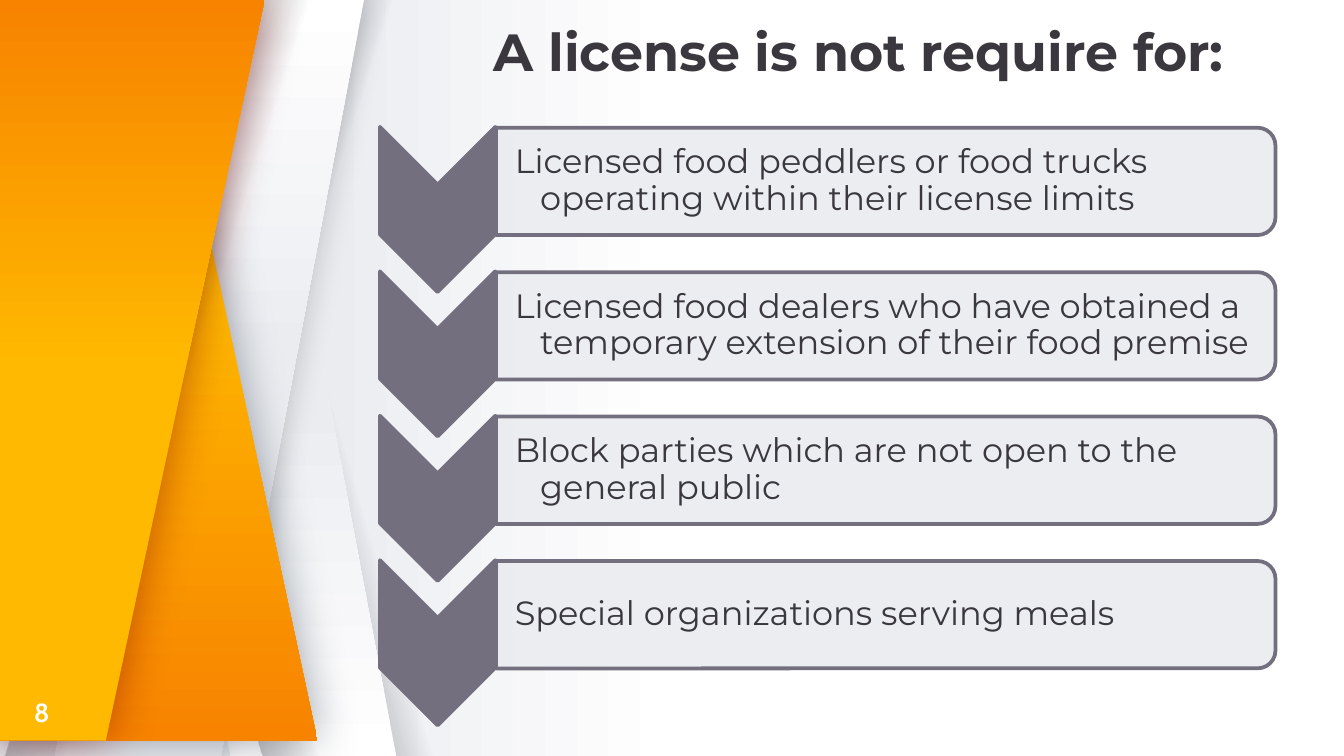
from lxml import etree
from pptx import Presentation
from pptx.dml.color import RGBColor
from pptx.enum.shapes import MSO_SHAPE
from pptx.enum.text import MSO_ANCHOR, PP_ALIGN
from pptx.oxml.ns import qn
from pptx.util import Cm, Pt

PARALLELOGRAM = MSO_SHAPE.PARALLELOGRAM
CHEVRON = MSO_SHAPE.CHEVRON
ROUNDED_END = MSO_SHAPE.ROUND_2_SAME_RECTANGLE
MIDDLE, BOTTOM = MSO_ANCHOR.MIDDLE, MSO_ANCHOR.BOTTOM
LEFT, CENTER = PP_ALIGN.LEFT, PP_ALIGN.CENTER

WHITE = RGBColor(0xFF, 0xFF, 0xFF)
PALE = RGBColor(0xEA, 0xEC, 0xF0)
SLATE = RGBColor(0x3E, 0x46, 0x55)
INK = RGBColor(0x27, 0x25, 0x2C)
TEXT = RGBColor(0x3A, 0x37, 0x3F)
MAUVE = RGBColor(0x74, 0x6F, 0x7E)
YELLOW = RGBColor(0xFF, 0xB9, 0x00)
ORANGE = RGBColor(0xF7, 0x83, 0x00)
BLACK = RGBColor(0x00, 0x00, 0x00)
MAROON = RGBColor(0x7E, 0x08, 0x08)

TITLE = "A license is not require for:"
PAGE = "8"
EXEMPTIONS = [
    "Licensed food peddlers or food trucks operating within their license limits",
    "Licensed food dealers who have obtained a temporary extension of their food premise",
    "Block parties which are not open to the general public",
    "Special organizations serving meals",
]

WIDTH, HEIGHT = 25.4, 14.29
BAND_WIDTH = 5.84
BACKDROP = [(0, WHITE, 100), (50, WHITE, 100), (76, PALE, 100), (100, PALE, 100)]
SHADE = [(0, SLATE, 100), (13, SLATE, 100), (55, INK, 0), (100, INK, 0)]
SILVER = [(0, WHITE, 100), (47, PALE, 100), (100, PALE, 100)]
LOWER_AMBER = [(0, YELLOW, 100), (37, YELLOW, 100), (100, ORANGE, 100)]
UPPER_AMBER = [(0, YELLOW, 100), (50, YELLOW, 100), (100, ORANGE, 100)]

BANDS = [
    dict(left=2.72, slant=0.753, flip=True, stops=SHADE, angle=196),
    dict(left=1.65, slant=0.463, flip=True, stops=SILVER, angle=270),
    dict(left=1.65, slant=0.753, flip=False, stops=SHADE, angle=18),
    dict(left=1.04, slant=0.463, flip=False, stops=SILVER, angle=90,
         shadow=(BLACK, 20, 16.9)),
    dict(left=0.56, slant=0.753, flip=True, stops=SHADE, angle=196),
    dict(points=[(0, 0), (0, HEIGHT), (5.66, HEIGHT), (2.92, 0)],
         stops=LOWER_AMBER, angle=90, shadow=(SLATE, 50, 24.8)),
    dict(left=0.08, slant=0.753, flip=False, stops=SHADE, angle=18),
    dict(points=[(0, HEIGHT), (0, 0), (5.08, 0), (2.34, HEIGHT)],
         stops=UPPER_AMBER, angle=270, shadow=(MAROON, 50, 24.8)),
]

TITLE_FONT = dict(name="Montserrat", size=Pt(28), bold=True)
PAGE_FONT = dict(name="Cabin", size=Pt(14), bold=True)
ITEM_FONT = dict(name="Montserrat", size=Pt(18), bold=False)

ROW_PITCH = 2.73
CHEVRON_CENTER, CHEVRON_SIZE = (8.27, 3.96), (3.12, 2.18)
BAR_CENTER, BAR_SIZE = (16.74, 3.43), (2.03, 14.73)
ITEM_BOX = (9.37, 2.51, 14.63, 1.83)
HANGING = Cm(0.48)


def add_color(parent, color, alpha):
    node = etree.SubElement(parent, qn("a:srgbClr"), val=str(color))
    if alpha < 100:
        etree.SubElement(node, qn("a:alpha"), val=str(alpha * 1000))


def set_gradient(properties, stops, angle):
    gradient = etree.Element(qn("a:gradFill"), rotWithShape="1")
    stop_list = etree.SubElement(gradient, qn("a:gsLst"))
    for position, color, alpha in stops:
        stop = etree.SubElement(stop_list, qn("a:gs"), pos=str(position * 1000))
        add_color(stop, color, alpha)
    etree.SubElement(gradient, qn("a:lin"), ang=str(angle * 60000), scaled="0")
    properties.replace(properties.find(qn("a:solidFill")), gradient)


def add_band(slide, band):
    if "points" in band:
        builder = slide.shapes.build_freeform(scale=Cm(1))
        start, *rest = band["points"]
        builder = slide.shapes.build_freeform(*start, scale=Cm(1))
        builder.add_line_segments(rest, close=True)
        shape = builder.convert_to_shape()
    else:
        shape = slide.shapes.add_shape(
            PARALLELOGRAM, Cm(band["left"]), 0, Cm(BAND_WIDTH), Cm(HEIGHT))
        shape.adjustments[0] = band["slant"]
        if band["flip"]:
            shape._element.spPr.find(qn("a:xfrm")).set("flipH", "1")
    shape.fill.solid()
    shape.line.fill.background()
    shape.shadow.inherit = False
    properties = shape._element.spPr
    set_gradient(properties, band["stops"], band["angle"])
    if "shadow" in band:
        color, alpha, blur = band["shadow"]
        glow = etree.SubElement(
            properties.find(qn("a:effectLst")), qn("a:outerShdw"),
            blurRad=str(int(Pt(blur))), dist="0", dir="0", algn="ctr", rotWithShape="0")
        add_color(glow, color, alpha)


def add_turned(slide, kind, center, size, drop, color, alpha=100):
    (x, y), (width, height) = center, size
    shape = slide.shapes.add_shape(
        kind, Cm(x - width / 2), Cm(y + drop - height / 2), Cm(width), Cm(height))
    shape.rotation = 90
    shape.fill.solid()
    shape.fill.fore_color.rgb = color
    shape.line.color.rgb = MAUVE
    shape.line.width = Pt(2)
    shape.shadow.inherit = False
    properties = shape._element.spPr
    etree.SubElement(properties.find(qn("a:ln")), qn("a:round"))
    if alpha < 100:
        fill_color = properties.find(qn("a:solidFill"))[0]
        etree.SubElement(fill_color, qn("a:alpha"), val=str(alpha * 1000))


def add_text(slide, text, box, font, color, anchor, align=LEFT, spacing=1.0,
             insets=(0, 0, 0, 0), hanging=0):
    frame = slide.shapes.add_textbox(*map(Cm, box)).text_frame
    left, top, right, bottom = map(Cm, insets)
    layout = dict(word_wrap=True, vertical_anchor=anchor, margin_left=left,
                  margin_top=top, margin_right=right, margin_bottom=bottom)
    for key, value in layout.items():
        setattr(frame, key, value)
    paragraph = frame.paragraphs[0]
    paragraph.alignment = align
    paragraph.line_spacing = spacing
    if hanging:
        indents = paragraph._p.get_or_add_pPr()
        indents.set("marL", str(hanging))
        indents.set("indent", str(-hanging))
    run = paragraph.add_run()
    run.text = text
    for key, value in font.items():
        setattr(run.font, key, value)
    run.font.color.rgb = color


def main():
    deck = Presentation()
    deck.slide_width, deck.slide_height = Cm(WIDTH), Cm(HEIGHT)
    slide = deck.slides.add_slide(deck.slide_layouts[6])
    slide.background.fill.solid()
    set_gradient(slide.element.find(".//" + qn("p:bgPr")), BACKDROP, 180)
    for band in BANDS:
        add_band(slide, band)
    add_text(slide, TITLE, (6.78, 0.58, 18.9, 0.99), TITLE_FONT, TEXT, BOTTOM,
             align=CENTER, spacing=0.9)
    add_text(slide, PAGE, (0.64, 13.11, 1.02, 0.69), PAGE_FONT, WHITE, MIDDLE)
    left, top, width, height = ITEM_BOX
    for row, exemption in enumerate(EXEMPTIONS):
        drop = row * ROW_PITCH
        add_turned(slide, CHEVRON, CHEVRON_CENTER, CHEVRON_SIZE, drop, MAUVE)
        add_turned(slide, ROUNDED_END, BAR_CENTER, BAR_SIZE, drop, PALE, 90)
        add_text(slide, exemption, (left, top + drop, width, height), ITEM_FONT, TEXT,
                 MIDDLE, spacing=0.9, insets=(0.36, 0.03, 0.03, 0.03), hanging=HANGING)
    deck.save("out.pptx")


if __name__ == "__main__":
    main()
